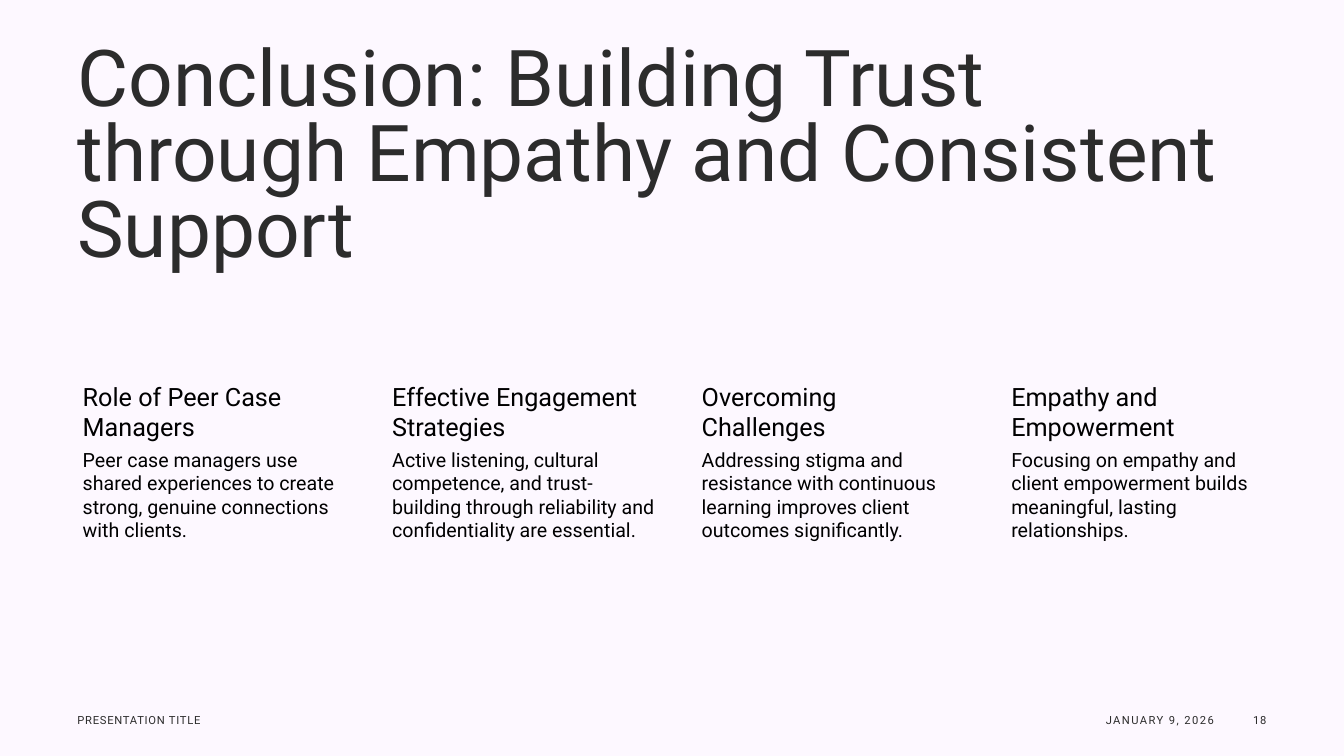
"""Build the closing slide: a large title, four takeaway columns and a footer."""
from pptx import Presentation
from pptx.dml.color import RGBColor
from pptx.enum.text import MSO_ANCHOR, PP_ALIGN
from pptx.util import Inches, Pt

TOP, MIDDLE, BOTTOM = MSO_ANCHOR.TOP, MSO_ANCHOR.MIDDLE, MSO_ANCHOR.BOTTOM
LEFT, RIGHT = PP_ALIGN.LEFT, PP_ALIGN.RIGHT
BACKGROUND = RGBColor(0xFD, 0xF8, 0xFF)
CHARCOAL = RGBColor(0x2C, 0x2C, 0x2C)
BLACK = RGBColor(0x00, 0x00, 0x00)
FONT = "Roboto"

deck = Presentation()
deck.slide_width, deck.slide_height = Inches(13.33), Inches(7.5)
page = deck.slides.add_slide(deck.slide_layouts[6])
page.background.fill.solid()
page.background.fill.fore_color.rgb = BACKGROUND


def add_text(text, left, top, width, height, size, color=CHARCOAL, anchor=TOP,
             align=LEFT, insets=(0.1, 0.05, 0.1, 0.05), line_spacing=1.0, tracking=0):
    box = page.shapes.add_textbox(Inches(left), Inches(top), Inches(width), Inches(height))
    frame = box.text_frame
    frame.word_wrap = True
    frame.vertical_anchor = anchor
    frame.margin_left, frame.margin_top, frame.margin_right, frame.margin_bottom = map(Inches, insets)
    para = frame.paragraphs[0]
    para.alignment = align
    para.line_spacing = line_spacing
    span = para.add_run()
    span.text = text
    span.font.name = FONT
    span.font.size = Pt(size)
    span.font.color.rgb = color
    if tracking:
        span.font._element.set("spc", str(int(tracking * 100)))


add_text("Conclusion: Building Trust through Empathy and Consistent Support",
         0.67, 0.77, 12, 1.98, 56, anchor=BOTTOM, line_spacing=0.8)

takeaways = [
    ("Role of Peer Case Managers",
     "Peer case managers use shared experiences to create strong, genuine connections with clients."),
    ("Effective Engagement Strategies",
     "Active listening, cultural competence, and trust-building through reliability "
     "and confidentiality are essential."),
    ("Overcoming Challenges",
     "Addressing stigma and resistance with continuous learning improves client outcomes significantly."),
    ("Empathy and Empowerment",
     "Focusing on empathy and client empowerment builds meaningful, lasting relationships."),
]
for column, (heading, detail) in enumerate(takeaways):
    left = 0.67 + 3.07 * column
    add_text(heading, left, 3.75, 2.79, 0.67, 18, BLACK, insets=(0.15, 0.03, 0.03, 0.03))
    add_text(detail, left, 4.42, 2.79, 2.33, 14, BLACK, insets=(0.15, 0.02, 0.02, 0.02))

footer = [
    ("PRESENTATION TITLE", 0.67, 3.07, LEFT, 0.5),
    ("JANUARY 9, 2026", 9.73, 2.41, RIGHT, 1),
    ("18", 12.19, 0.47, RIGHT, 0.5),
]
for text, left, width, align, tracking in footer:
    add_text(text, left, 6.94, width, 0.4, 8, anchor=MIDDLE, align=align, tracking=tracking)

deck.save("out.pptx")
